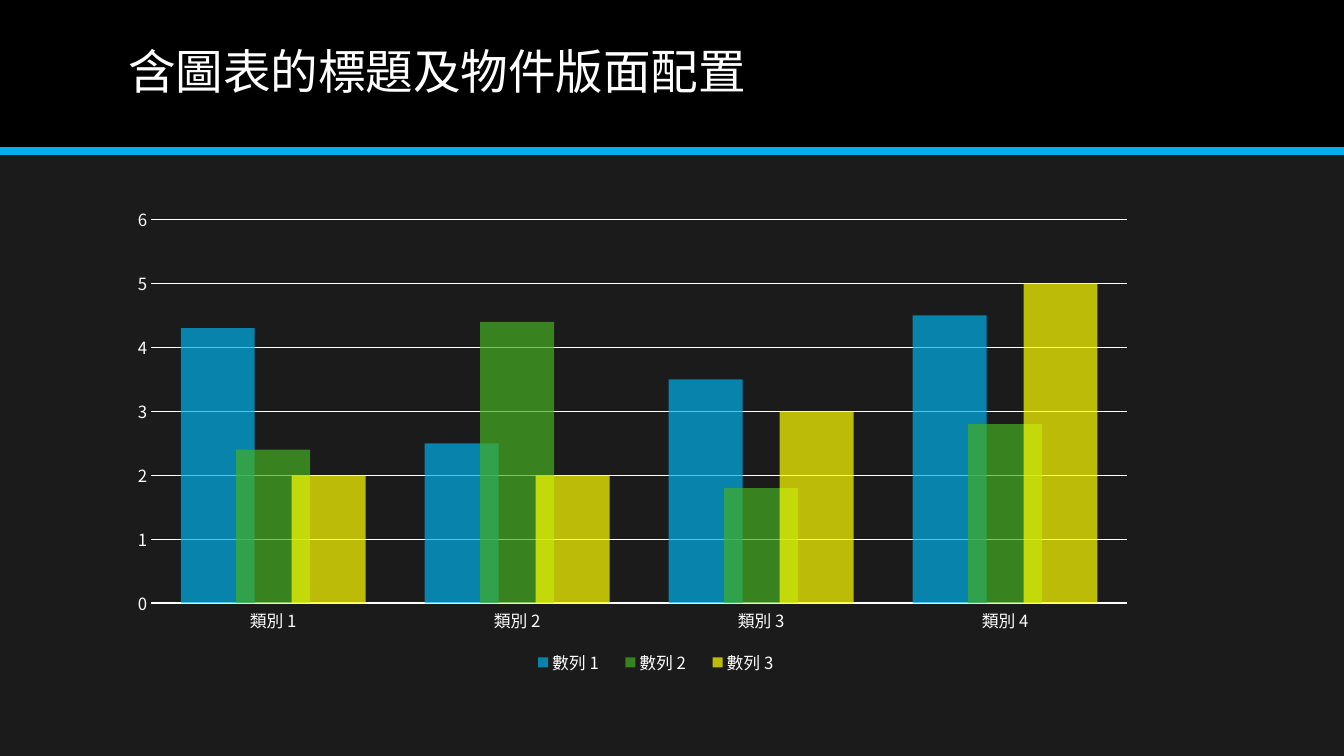
from lxml import etree
from pptx import Presentation
from pptx.chart.data import CategoryChartData
from pptx.dml.color import RGBColor
from pptx.enum.chart import XL_CHART_TYPE, XL_LEGEND_POSITION, XL_TICK_MARK
from pptx.enum.shapes import MSO_CONNECTOR, MSO_SHAPE
from pptx.enum.text import MSO_ANCHOR, MSO_AUTO_SIZE, PP_ALIGN
from pptx.oxml.ns import qn
from pptx.util import Emu, Pt

CLUSTERED = XL_CHART_TYPE.COLUMN_CLUSTERED
LEGEND_BOTTOM = XL_LEGEND_POSITION.BOTTOM
NO_TICK = XL_TICK_MARK.NONE
STRAIGHT = MSO_CONNECTOR.STRAIGHT
RECTANGLE = MSO_SHAPE.RECTANGLE

BACKGROUND = RGBColor(0x1B, 0x1B, 0x1B)
BLACK = RGBColor(0x00, 0x00, 0x00)
WHITE = RGBColor(0xFF, 0xFF, 0xFF)
BLUE = RGBColor(0x00, 0xB0, 0xEA)
GREEN = RGBColor(0x45, 0xAE, 0x22)
YELLOW = RGBColor(0xFF, 0xFF, 0x00)

TITLE_FONT = "Noto Sans CJK TC"
CHART_FONT = "Noto Sans CJK SC"
SLIDE_WIDTH, SLIDE_HEIGHT = 1344, 756
HEADER_BOX = (0, 0, SLIDE_WIDTH, 151)
CHART_BOX = (118, 190, 1109, 492)

CATEGORIES = ["類別 1", "類別 2", "類別 3", "類別 4"]
SERIES = [
    ("數列 1", (4.3, 2.5, 3.5, 4.5), BLUE),
    ("數列 2", (2.4, 4.4, 1.8, 2.8), GREEN),
    ("數列 3", (2, 2, 3, 5), YELLOW),
]


def px(length):
    return Emu(round(length * 914400 / 100.8))


def format_font(font, typeface, size):
    for attribute, value in {"name": typeface, "size": Pt(size), "bold": False}.items():
        setattr(font, attribute, value)
    font.color.rgb = WHITE


def set_east_asian(properties, typeface):
    """Use the typeface for Chinese characters too."""
    latin = properties.find(qn("a:latin"))
    east_asian = etree.Element(qn("a:ea"), typeface=typeface)
    latin.addnext(east_asian)


def add_header(slide, box, heading):
    left, top, width, height = box
    band = slide.shapes.add_shape(RECTANGLE, *map(px, box))
    band.shadow.inherit = False
    band.fill.solid()
    band.fill.fore_color.rgb = BLACK
    band.line.fill.background()

    bottom = px(top + height)
    rule = slide.shapes.add_connector(STRAIGHT, px(left), bottom, px(left + width), bottom)
    rule.line.color.rgb = BLUE
    rule.line.width = Pt(6)
    etree.SubElement(rule.element.spPr, qn("a:effectLst"))

    title = slide.shapes.title
    title.element.getparent().append(title.element)
    title.left, title.top = px(left + 118), px(top + 14)
    title.width, title.height = px(1109), px(121)
    frame = title.text_frame
    frame.text = heading
    frame.word_wrap = True
    frame.auto_size = MSO_AUTO_SIZE.NONE
    frame.vertical_anchor = MSO_ANCHOR.MIDDLE
    paragraph = frame.paragraphs[0]
    paragraph.alignment = PP_ALIGN.LEFT
    paragraph.line_spacing = 0.9
    run = paragraph.runs[0]
    format_font(run.font, TITLE_FONT, 34)
    set_east_asian(run.font.language_id is not None and run._r.get_or_add_rPr(), TITLE_FONT)


def set_layout(parent, index, fractions, inner=False):
    """Place a part of the chart by fractions of the chart's size."""
    for old in parent.findall(qn("c:layout")):
        parent.remove(old)
    layout = etree.Element(qn("c:layout"))
    manual = etree.SubElement(layout, qn("c:manualLayout"))
    settings = {"layoutTarget": "inner"} if inner else {}
    settings.update(xMode="edge", yMode="edge")
    settings.update(zip("xywh", map(str, fractions)))
    for tag, value in settings.items():
        etree.SubElement(manual, qn(f"c:{tag}"), val=value)
    parent.insert(index, layout)


def format_axes(chart):
    category_axis, value_axis = chart.category_axis, chart.value_axis
    for axis in (category_axis, value_axis):
        axis.major_tick_mark = NO_TICK
        axis.minor_tick_mark = NO_TICK
        format_font(axis.tick_labels.font, CHART_FONT, 12)
    category_axis.format.line.color.rgb = WHITE
    category_axis.format.line.width = Pt(1.25)

    for attribute, value in {"minimum_scale": 0, "maximum_scale": 6, "major_unit": 1}.items():
        setattr(value_axis, attribute, value)
    value_axis.format.line.fill.background()
    gridline = value_axis.major_gridlines.format.line
    gridline.color.rgb = WHITE
    gridline.width = Pt(0.75)


def add_column_chart(slide, box):
    figures = CategoryChartData()
    figures.categories = CATEGORIES
    for name, values, _ in SERIES:
        figures.add_series(name, values)
    chart = slide.shapes.add_chart(CLUSTERED, *map(px, box), figures).chart
    chart.has_title = False
    format_font(chart.font, CHART_FONT, 10)
    format_axes(chart)

    columns = chart.plots[0]
    for attribute, value in {"gap_width": 80, "overlap": 25, "vary_by_categories": False}.items():
        setattr(columns, attribute, value)
    for series, (_, _, color) in zip(columns.series, SERIES):
        fill = series.format.fill
        fill.solid()
        fill.fore_color.rgb = color
        solid = series.format.fill.fore_color
        solid.rgb = color
        for rgb in series._element.iter(qn("a:srgbClr")):
            etree.SubElement(rgb, qn("a:alpha"), val="70000")

    chart.has_legend = True
    legend = chart.legend
    legend.position = LEGEND_BOTTOM
    legend.include_in_layout = False
    format_font(legend.font, CHART_FONT, 12)

    root = columns._element.getroottree().getroot()
    set_layout(root.find(".//" + qn("c:plotArea")), 0, (0.03, 0.06, 0.88, 0.78), inner=True)
    set_layout(root.find(".//" + qn("c:legend")), 1, (0.36, 0.93, 0.25, 0.06))
    for properties in root.iter(qn("a:defRPr")):
        set_east_asian(properties, CHART_FONT)


def main():
    presentation = Presentation()
    presentation.slide_width, presentation.slide_height = px(SLIDE_WIDTH), px(SLIDE_HEIGHT)
    slide = presentation.slides.add_slide(presentation.slide_layouts[5])
    slide.background.fill.solid()
    slide.background.fill.fore_color.rgb = BACKGROUND
    add_header(slide, HEADER_BOX, "含圖表的標題及物件版面配置")
    add_column_chart(slide, CHART_BOX)
    presentation.save("out.pptx")


if __name__ == "__main__":
    main()
